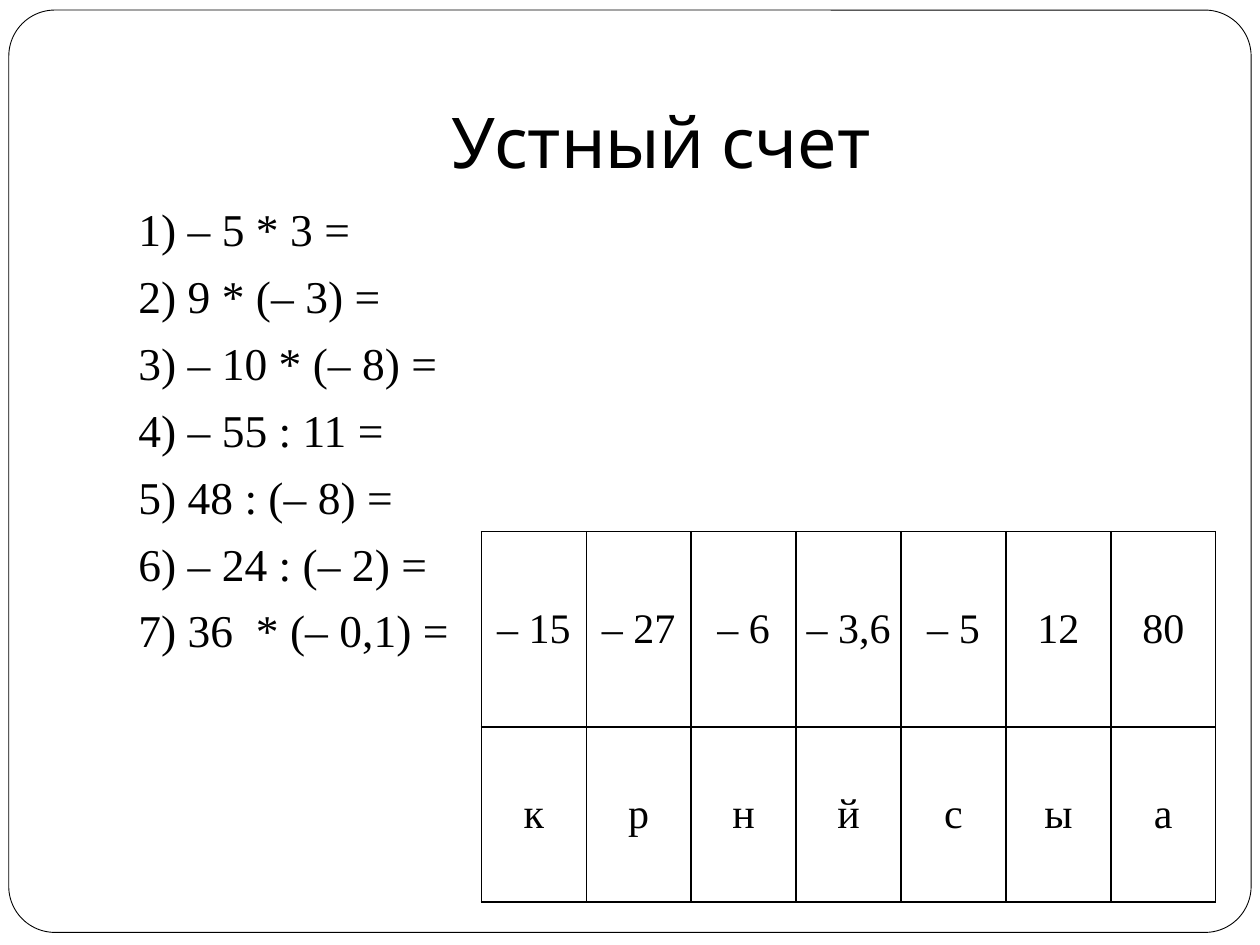
from dataclasses import dataclass

from lxml.etree import SubElement
from pptx import Presentation
from pptx.dml.color import RGBColor
from pptx.enum.shapes import MSO_SHAPE
from pptx.enum.text import MSO_ANCHOR, PP_ALIGN
from pptx.oxml.ns import qn
from pptx.util import Inches, Pt


@dataclass(frozen=True)
class Theme:
    ink: RGBColor = RGBColor(0, 0, 0)
    paper: RGBColor = RGBColor(255, 255, 255)
    title_font: str = "Karla"
    body_font: str = "Times New Roman"
    title_size: float = 40
    body_size: float = 26
    answer_size: float = 24
    border: float = 1


@dataclass(frozen=True)
class Box:
    left: float
    top: float
    width: float
    height: float

    def lengths(self) -> tuple:
        return tuple(Inches(v) for v in (self.left, self.top, self.width, self.height))


@dataclass(frozen=True)
class Answer:
    value: str
    letter: str


THEME = Theme()
EXERCISES = [
    "1) – 5 * 3 =",
    "2) 9 * (– 3) =",
    "3) – 10 * (– 8) =",
    "4) – 55 : 11 =",
    "5) 48 : (– 8) =",
    "6) – 24 : (– 2) =",
    "7) 36  * (– 0,1) =",
]
ANSWERS = [
    Answer("– 15", "к"),
    Answer("– 27", "р"),
    Answer("– 6", "н"),
    Answer("– 3,6", "й"),
    Answer("– 5", "с"),
    Answer("12", "ы"),
    Answer("80", "а"),
]
ROW_HEIGHTS = (1.55, 1.39)


def write(frame, lines: list[str], *, font: str, size: float,
          align=PP_ALIGN.LEFT, before: float = 0, hanging: float = 0) -> None:
    frame.word_wrap = True
    for number, line in enumerate(lines):
        paragraph = frame.add_paragraph() if number else frame.paragraphs[0]
        paragraph.alignment = align
        paragraph.space_before = Pt(before)
        if hanging:
            properties = paragraph._p.get_or_add_pPr()
            properties.set("marL", str(Inches(hanging)))
            properties.set("indent", str(-Inches(hanging)))
        run = paragraph.add_run()
        run.text = line
        run.font.name = font
        run.font.size = Pt(size)
        run.font.color.rgb = THEME.ink


def draw_frame(slide, box: Box) -> None:
    border = slide.shapes.add_shape(MSO_SHAPE.ROUNDED_RECTANGLE, *box.lengths())
    border.adjustments[0] = 0.05
    border.shadow.inherit = False
    border.fill.solid()
    border.fill.fore_color.rgb = THEME.paper
    border.line.color.rgb = THEME.ink
    border.line.width = Pt(0.5)


def draw_title(slide, box: Box, title: str) -> None:
    frame = slide.shapes.add_textbox(*box.lengths()).text_frame
    frame.vertical_anchor = MSO_ANCHOR.BOTTOM
    frame.margin_bottom = Inches(0.1)
    write(frame, [title], font=THEME.title_font, size=THEME.title_size,
          align=PP_ALIGN.CENTER)


def draw_exercises(slide, box: Box, exercises: list[str]) -> None:
    frame = slide.shapes.add_textbox(*box.lengths()).text_frame
    write(frame, exercises, font=THEME.body_font, size=THEME.body_size,
          before=7, hanging=0.3)


def outline_cell(cell) -> None:
    properties = cell._tc.get_or_add_tcPr()
    for side in ("lnL", "lnR", "lnT", "lnB"):
        edge = SubElement(properties, qn(f"a:{side}"), w=str(Pt(THEME.border)))
        fill = SubElement(edge, qn("a:solidFill"))
        SubElement(fill, qn("a:srgbClr"), val=str(THEME.ink))


def draw_answers(slide, box: Box, answers: list[Answer]) -> None:
    grid = slide.shapes.add_table(
        len(ROW_HEIGHTS), len(answers), *box.lengths()).table
    grid.first_row = False
    grid.horz_banding = False
    for row, height in zip(grid.rows, ROW_HEIGHTS):
        row.height = Inches(height)
    for column, answer in enumerate(answers):
        grid.columns[column].width = Inches(box.width / len(answers))
        for row, text in enumerate((answer.value, answer.letter)):
            cell = grid.cell(row, column)
            outline_cell(cell)
            cell.fill.solid()
            cell.fill.fore_color.rgb = THEME.paper
            cell.vertical_anchor = MSO_ANCHOR.MIDDLE
            cell.margin_left = cell.margin_right = Inches(0.05)
            cell.margin_top = cell.margin_bottom = Inches(0.05)
            write(cell.text_frame, [text], font=THEME.body_font,
                  size=THEME.answer_size, align=PP_ALIGN.CENTER)


def main() -> None:
    deck = Presentation()
    deck.slide_width, deck.slide_height = Inches(10), Inches(7.5)
    slide = deck.slides.add_slide(deck.slide_layouts[6])
    draw_frame(slide, Box(0.07, 0.08, 9.86, 7.32))
    draw_title(slide, Box(1, 0.3, 8.5, 1.25), "Устный счет")
    draw_exercises(slide, Box(1, 1.55, 3.06, 5.04), EXERCISES)
    draw_answers(slide, Box(3.82, 4.22, 5.83, sum(ROW_HEIGHTS)), ANSWERS)
    deck.save("out.pptx")


if __name__ == "__main__":
    main()
